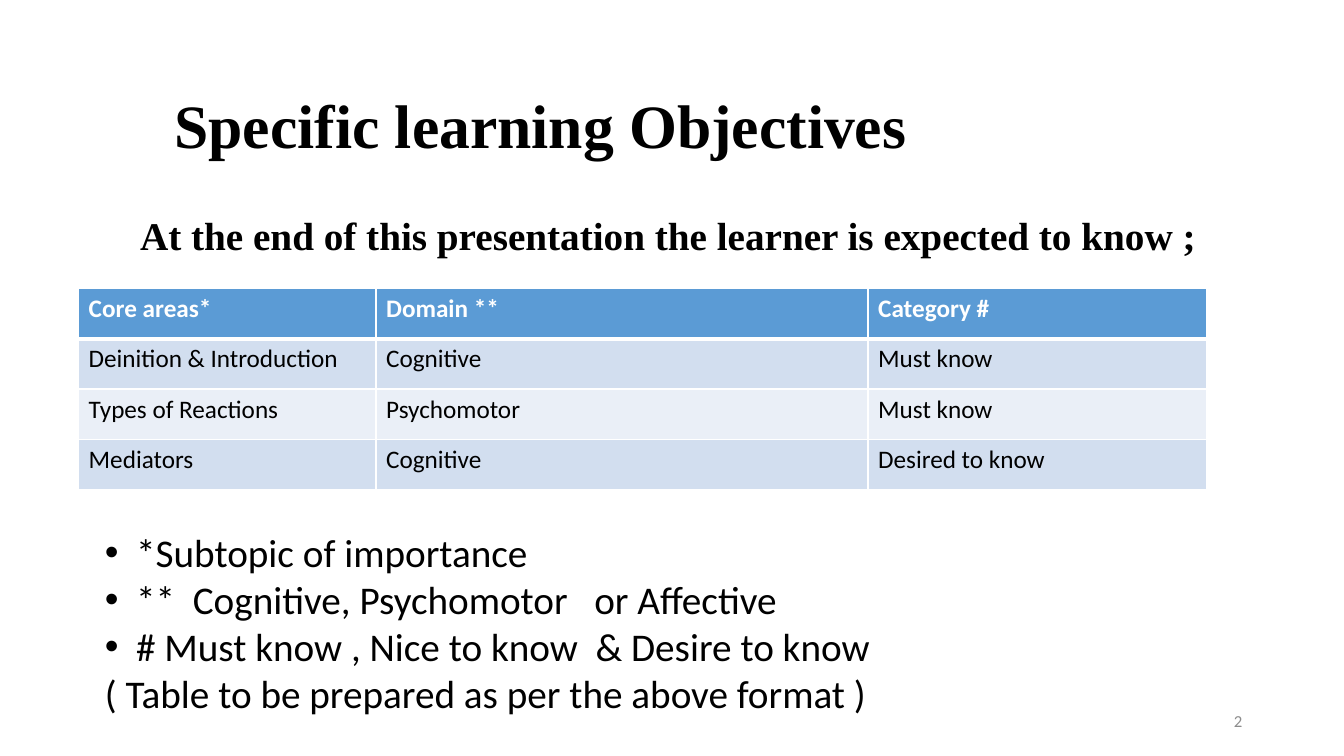
"""Build the learning objectives slide."""
from pptx import Presentation
from pptx.dml.color import RGBColor
from pptx.enum import text as t
from pptx.oxml import parse_xml
from pptx.oxml.ns import nsdecls
from pptx.util import Inches, Pt

SERIF, SANS = "Times New Roman", "Calibri"
BLACK, WHITE, GREY = "000000", "FFFFFF", "8C8C8C"
HEADER_FILL, BAND_FILLS = "5B9BD5", ("D2DEEF", "EAEFF7")
COLUMN_WIDTHS, ROW_HEIGHT = (2.95, 4.88, 3.36), 0.5
OBJECTIVES = (
    ("Core areas*", "Domain **", "Category #"),
    ("Deinition & Introduction", "Cognitive", "Must know"),
    ("Types of Reactions", "Psychomotor", "Must know"),
    ("Mediators", "Cognitive", "Desired to know"),
)
LEGEND = (
    "*Subtopic of importance",
    "**  Cognitive, Psychomotor   or Affective",
    "# Must know , Nice to know  & Desire to know",
)
FORMAT_NOTE = "( Table to be prepared as per the above format )"


def color(value):
    return RGBColor.from_string(value)


def place(shape, left, top, width, height):
    shape.left, shape.top = Inches(left), Inches(top)
    shape.width, shape.height = Inches(width), Inches(height)


def add_run(paragraph, words, size, font, fill, bold=False):
    run = paragraph.add_run()
    run.text = words
    run.font.size, run.font.name, run.font.bold = Pt(size), font, bold
    run.font.color.rgb = color(fill)


def set_title(slide, words):
    title = slide.shapes.title
    place(title, 1.63, 0.67, 10.13, 1.21)
    title.text_frame.vertical_anchor = t.MSO_ANCHOR.MIDDLE
    paragraph = title.text_frame.paragraphs[0]
    paragraph.alignment = t.PP_ALIGN.LEFT
    paragraph.line_spacing = 0.9
    add_run(paragraph, words, 44, SERIF, BLACK, True)


def add_label(slide, box, words, size, font, fill, bold=False,
              align=t.PP_ALIGN.LEFT, anchor=t.MSO_ANCHOR.TOP):
    frame = slide.shapes.add_textbox(*map(Inches, box)).text_frame
    frame.word_wrap = True
    frame.vertical_anchor = anchor
    paragraph = frame.paragraphs[0]
    paragraph.alignment = align
    add_run(paragraph, words, size, font, fill, bold)


def set_borders(cell, top, bottom):
    properties = cell._tc.get_or_add_tcPr()
    for index, (side, points) in enumerate(
            (("L", 1), ("R", 1), ("T", top), ("B", bottom))):
        properties.insert(index, parse_xml(
            f'<a:ln{side} {nsdecls("a")} w="{Pt(points)}"><a:solidFill>'
            f'<a:srgbClr val="{WHITE}"/></a:solidFill></a:ln{side}>'))


def add_objectives_table(slide):
    table = slide.shapes.add_table(
        len(OBJECTIVES), len(COLUMN_WIDTHS), Inches(0.78), Inches(2.86),
        Inches(sum(COLUMN_WIDTHS)), Inches(ROW_HEIGHT * len(OBJECTIVES))).table
    for column, width in zip(table.columns, COLUMN_WIDTHS):
        column.width = Inches(width)
    for row, entries in enumerate(OBJECTIVES):
        header = row == 0
        table.rows[row].height = Inches(ROW_HEIGHT)
        for column, words in enumerate(entries):
            cell = table.cell(row, column)
            cell.fill.solid()
            cell.fill.fore_color.rgb = color(
                HEADER_FILL if header else BAND_FILLS[(row - 1) % 2])
            set_borders(cell, 3 if row == 1 else 1, 3 if header else 1)
            add_run(cell.text_frame.paragraphs[0], words, 18, SANS,
                    WHITE if header else BLACK, header)


def set_bullet(paragraph, bulleted):
    properties = paragraph._p.get_or_add_pPr()
    indent = Inches(0.31) if bulleted else 0
    properties.set("marL", str(indent))
    properties.set("indent", str(-indent))
    if bulleted:
        properties.append(parse_xml(f'<a:buFont {nsdecls("a")} typeface="Arial"/>'))
        properties.append(parse_xml(f'<a:buChar {nsdecls("a")} char="•"/>'))
    else:
        properties.append(parse_xml(f'<a:buNone {nsdecls("a")}/>'))


def set_legend(slide):
    body = slide.placeholders[1]
    place(body, 0.94, 5.19, 9.06, 1.99)
    frame = body.text_frame
    frame.auto_size = t.MSO_AUTO_SIZE.NONE
    for index, words in enumerate((*LEGEND, FORMAT_NOTE)):
        paragraph = frame.add_paragraph() if index else frame.paragraphs[0]
        paragraph.space_before = Pt(0)
        set_bullet(paragraph, words in LEGEND)
        add_run(paragraph, words, 28, SANS, BLACK)


def main():
    presentation = Presentation()
    presentation.slide_width = Inches(13.33)
    presentation.slide_height = Inches(7.5)
    slide = presentation.slides.add_slide(presentation.slide_layouts[1])
    set_title(slide, "Specific learning Objectives")
    add_objectives_table(slide)
    set_legend(slide)
    add_label(slide, (1.29, 2.05, 10.71, 0.57),
              "At the end of this presentation the learner is expected to know ;",
              28, SERIF, BLACK, True)
    add_label(slide, (9.42, 6.95, 3, 0.4), "2", 12, SANS, GREY,
              align=t.PP_ALIGN.RIGHT, anchor=t.MSO_ANCHOR.MIDDLE)
    presentation.save("out.pptx")


if __name__ == "__main__":
    main()
